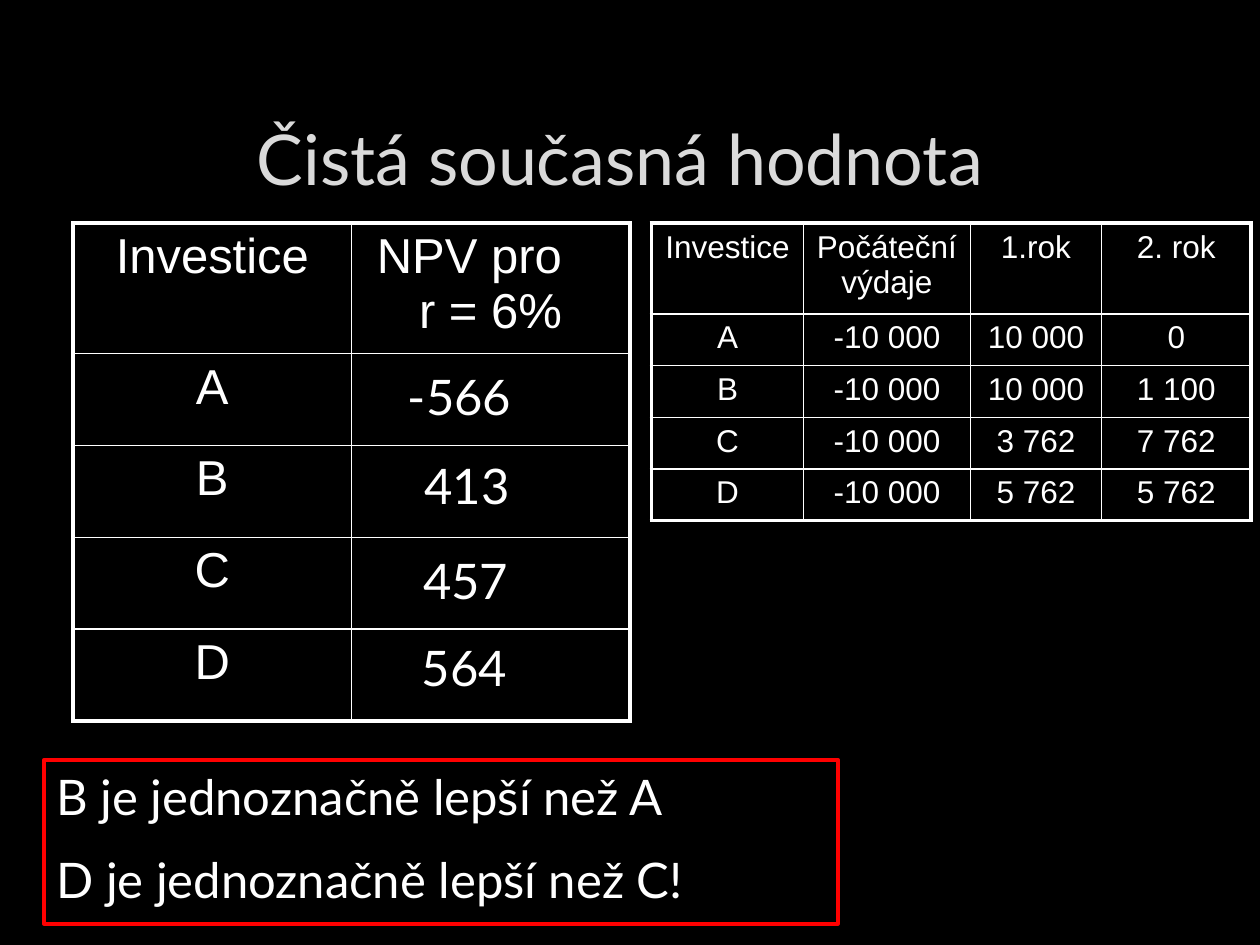
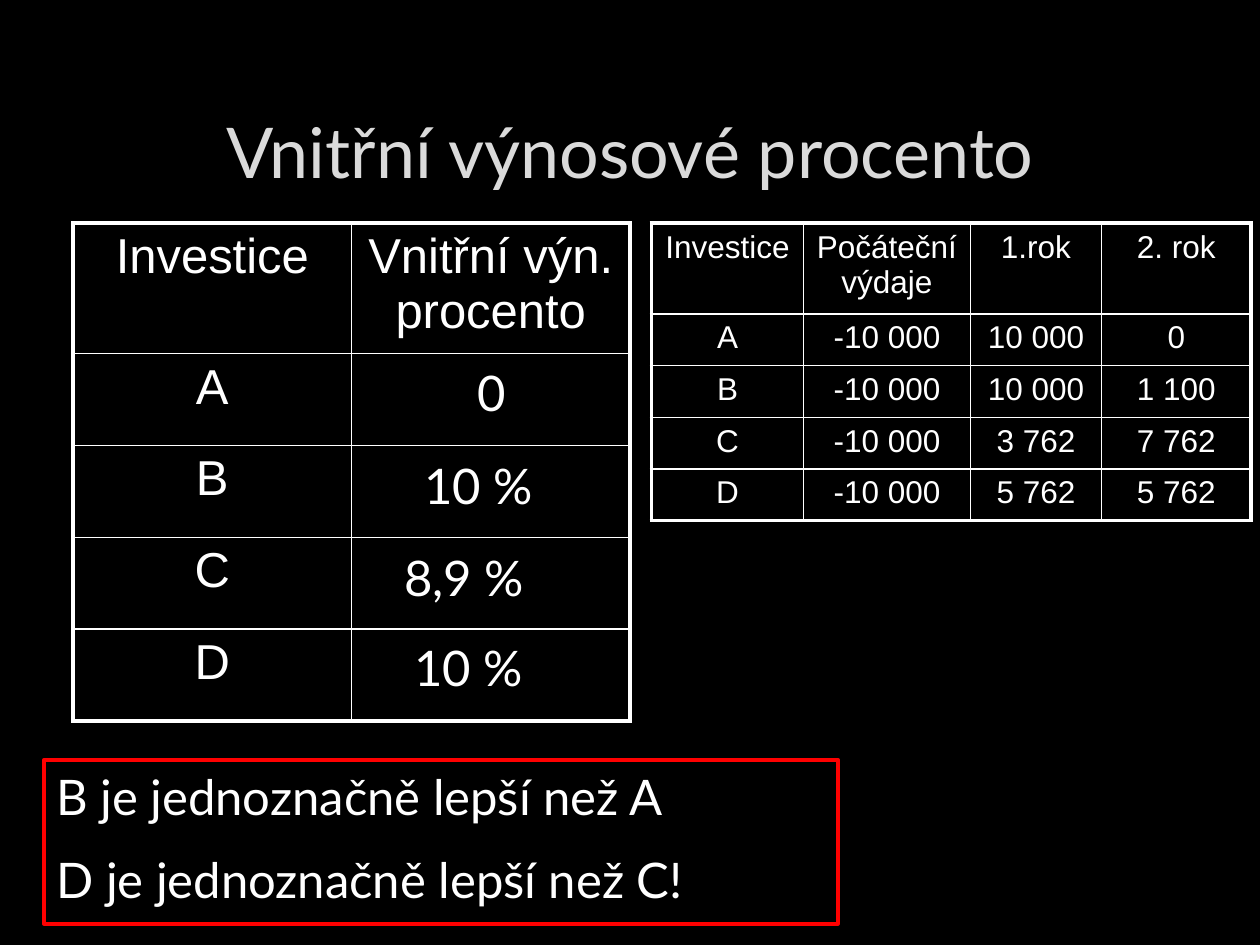
from dataclasses import dataclass
from itertools import product

from lxml import etree
from pptx import Presentation
from pptx.dml.color import RGBColor
from pptx.enum.shapes import MSO_SHAPE
from pptx.enum.text import MSO_ANCHOR, PP_ALIGN
from pptx.oxml.ns import qn
from pptx.util import Pt

CENTER, LEFT, RIGHT = PP_ALIGN.CENTER, PP_ALIGN.LEFT, PP_ALIGN.RIGHT
MIDDLE, TOP = MSO_ANCHOR.MIDDLE, MSO_ANCHOR.TOP
RECTANGLE = MSO_SHAPE.RECTANGLE


@dataclass(frozen=True)
class Theme:
    background: str = "000000"
    title: str = "DADADA"
    title_outline: str = "404040"
    text: str = "FFFFFF"
    frame: str = "FF0000"
    text_font: str = "Lato"
    table_font: str = "Arial"
    title_size: float = 40
    text_size: float = 28
    small_size: float = 18
    thick: float = 2.25
    thin: float = 1


THEME = Theme()

# Boxes are left, top, width, height in points.
CASH_FLOW_BOX = (372.25, 127.5, 342.75, 170)
RESULT_BOX = (41.75, 127.5, 318.25, 280.5)
CONCLUSION_BOX = (25.2, 434.2, 453.6, 93.6)
ANSWER_HEIGHT = 41

CASH_FLOWS = [
    ["Investice", "Počáteční výdaje", "1.rok", "2. rok"],
    ["A", "-10 000", "10 000", "0"],
    ["B", "-10 000", "10 000", "1 100"],
    ["C", "-10 000", "3 762", "7 762"],
    ["D", "-10 000", "5 762", "5 762"],
]
CONCLUSIONS = ["B je jednoznačně lepší než A", "D je jednoznačně lepší než C!"]

# Each answer is text, left, top, width.
METHODS = [
    dict(
        title="Čistá současná hodnota",
        title_box=(30.2, 48.2, 648, 84.2),
        measure="NPV pro r = 6%",
        measure_align=RIGHT,
        measure_margin=39,
        answers=[("-566", 226, 206, 76), ("413", 235.5, 257, 91),
                 ("457", 234.7, 311, 119), ("564", 234, 360.7, 108)],
    ),
    dict(
        title="Vnitřní výnosové procento",
        title_box=(36, 43.9, 648, 84.2),
        measure="Vnitřní výn. procento",
        measure_align=CENTER,
        measure_margin=7.2,
        answers=[("0", 265.7, 203.8, 28), ("10 %", 235.5, 257, 91),
                 ("8,9 %", 224, 309.6, 119), ("10 %", 229.7, 360.7, 108)],
    ),
]


def points(values):
    return [Pt(value) for value in values]


def style_para(para, font, size, color, align):
    para.alignment = align
    for span in para.runs:
        span.font.name = font
        span.font.size = Pt(size)
        span.font.color.rgb = RGBColor.from_string(color)


def write_text(shape, lines, size=THEME.text_size, color=THEME.text,
               align=LEFT, anchor=TOP):
    """Fill a shape with paragraphs set half a line apart."""
    frame = shape.text_frame
    frame.word_wrap = True
    frame.vertical_anchor = anchor
    frame.text = "\n".join(lines)
    for index, para in enumerate(frame.paragraphs):
        style_para(para, THEME.text_font, size, color, align)
        if index:
            para.space_before = Pt(size / 2)


def outline_text(span, color, width, opacity):
    line = etree.Element(qn("a:ln"), w=str(Pt(width)))
    fill = etree.SubElement(line, qn("a:solidFill"))
    tint = etree.SubElement(fill, qn("a:srgbClr"), val=color)
    etree.SubElement(tint, qn("a:alpha"), val=str(opacity * 1000))
    span.font._element.insert(0, line)


def add_title(page, box, title):
    shape = page.shapes.add_textbox(*points(box))
    write_text(shape, [title], THEME.title_size, THEME.title, CENTER, MIDDLE)
    outline_text(shape.text_frame.paragraphs[0].runs[0],
                 THEME.title_outline, 0.75, 10)


def set_borders(cell, outer_edges):
    """Draw all four cell edges, the outer ones thick."""
    properties = cell._tc.get_or_add_tcPr()
    for index, (edge, outer) in enumerate(outer_edges.items()):
        width = THEME.thick if outer else THEME.thin
        line = etree.Element(qn(f"a:{edge}"), w=str(Pt(width)))
        fill = etree.SubElement(line, qn("a:solidFill"))
        etree.SubElement(fill, qn("a:srgbClr"), val=THEME.text)
        properties.insert(index, line)


def add_grid(page, box, rows, column_widths, header_height, size):
    """Add a ruled table; rows below the header share the height left."""
    row_count, column_count = len(rows), len(column_widths)
    table = page.shapes.add_table(row_count, column_count, *points(box)).table
    table.first_row = table.horz_banding = False
    for column, width in zip(table.columns, column_widths):
        column.width = Pt(width)
    body_height = (box[3] - header_height) / (row_count - 1)
    for index, row in enumerate(table.rows):
        row.height = Pt(body_height if index else header_height)
    for y, x in product(range(row_count), range(column_count)):
        cell = table.cell(y, x)
        cell.text = rows[y][x]
        style_para(cell.text_frame.paragraphs[0], THEME.table_font, size,
                   THEME.text, CENTER)
        cell.fill.background()
        set_borders(cell, {"lnL": x == 0, "lnR": x == column_count - 1,
                           "lnT": y == 0, "lnB": y == row_count - 1})
    return table


def add_cash_flows(page, box):
    add_grid(page, box, CASH_FLOWS, [87, 95.25, 75, 85.5], 52,
             THEME.small_size)


def add_results(page, box, method):
    """Add the investment table and the answers lying over its second column."""
    rows = [["Investice", method["measure"]]] + [[name, ""] for name in "ABCD"]
    table = add_grid(page, box, rows, [box[2] / 2] * 2, 70.3, THEME.text_size)
    measure_cell = table.cell(0, 1)
    measure_cell.margin_right = Pt(method["measure_margin"])
    measure_cell.text_frame.paragraphs[0].alignment = method["measure_align"]
    for answer, left, top, width in method["answers"]:
        shape = page.shapes.add_textbox(
            *points((left, top, width, ANSWER_HEIGHT)))
        write_text(shape, [answer])


def add_conclusions(page, box):
    shape = page.shapes.add_shape(RECTANGLE, *points(box))
    shape.shadow.inherit = False
    shape.fill.background()
    shape.line.color.rgb = RGBColor.from_string(THEME.frame)
    shape.line.width = Pt(THEME.thick)
    write_text(shape, CONCLUSIONS)


def add_method_page(deck, method):
    page = deck.slides.add_slide(deck.slide_layouts[6])
    page.background.fill.solid()
    page.background.fill.fore_color.rgb = RGBColor.from_string(THEME.background)
    add_title(page, method["title_box"], method["title"])
    add_cash_flows(page, CASH_FLOW_BOX)
    add_results(page, RESULT_BOX, method)
    add_conclusions(page, CONCLUSION_BOX)


def main():
    deck = Presentation()
    deck.slide_width, deck.slide_height = Pt(720), Pt(540)
    for method in METHODS:
        add_method_page(deck, method)
    deck.save("out.pptx")


if __name__ == "__main__":
    main()
